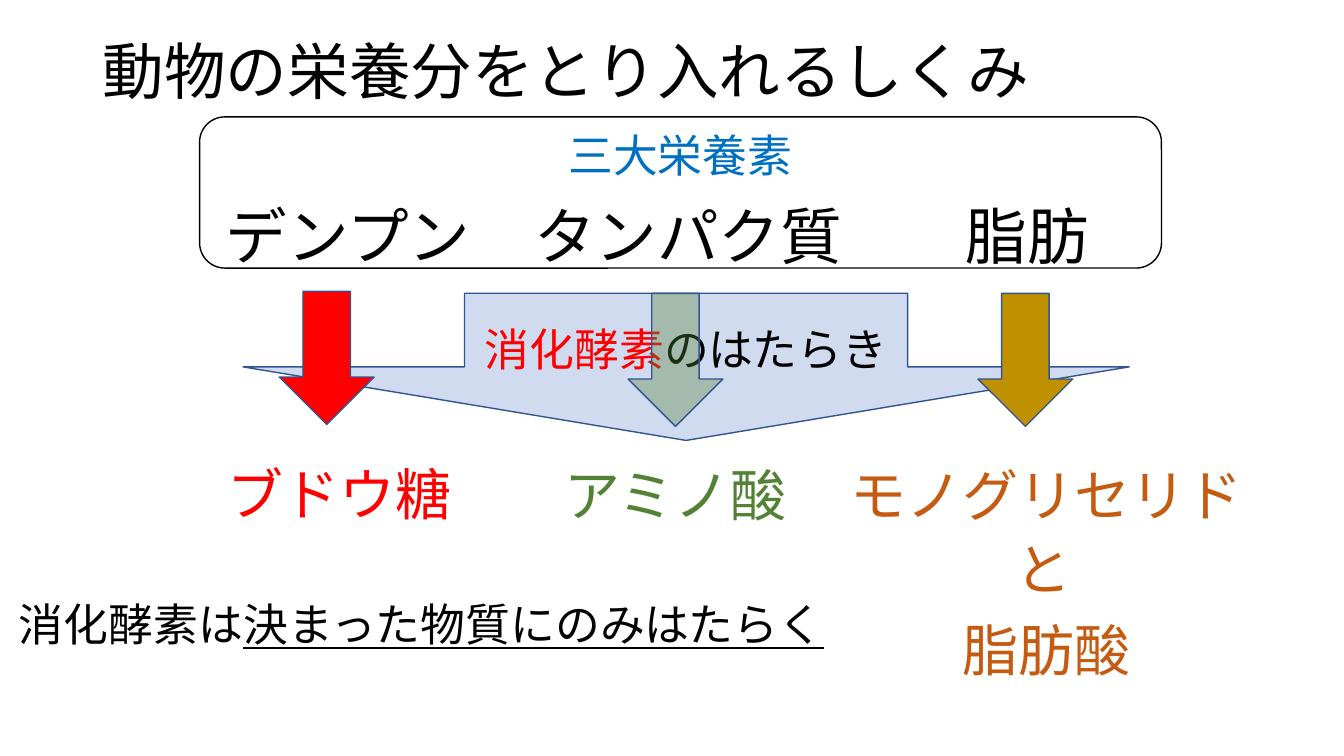
from dataclasses import dataclass

from lxml import etree
from pptx import Presentation
from pptx.dml.color import RGBColor
from pptx.enum.shapes import MSO_SHAPE
from pptx.enum.text import MSO_ANCHOR, PP_ALIGN
from pptx.oxml.ns import qn
from pptx.util import Inches, Pt

ROUNDED, DOWN_ARROW = MSO_SHAPE.ROUNDED_RECTANGLE, MSO_SHAPE.DOWN_ARROW
TOP, MIDDLE = MSO_ANCHOR.TOP, MSO_ANCHOR.MIDDLE
LEFT, CENTER = PP_ALIGN.LEFT, PP_ALIGN.CENTER


@dataclass(frozen=True)
class Theme:
    font: str = "Noto Sans CJK JP"
    title: int = 44
    product: int = 40
    note: int = 32
    black: str = "000000"
    white: str = "FFFFFF"
    blue: str = "0070C0"
    pale_blue: str = "4472C4"
    outline: str = "325491"
    red: str = "FF0000"
    green: str = "548235"
    gold: str = "BF9000"
    orange: str = "C55A11"


theme = Theme()


def write(shape, spans, size, align=CENTER, anchor=MIDDLE):
    """Fill a shape with one paragraph of (text, colour, underlined) spans."""
    frame = shape.text_frame
    frame.word_wrap = True
    frame.vertical_anchor = anchor
    para = frame.paragraphs[0]
    para.alignment = align
    for text, color, underlined in spans:
        span = para.add_run()
        span.text = text
        span.font.size = Pt(size)
        span.font.name = theme.font
        span.font.color.rgb = RGBColor.from_string(color)
        if underlined:
            span.font.underline = True
        east_asian = etree.SubElement(span.font._element, qn("a:ea"))
        east_asian.set("typeface", theme.font)
    return para


def add_figure(kind, bounds, fill, line, opacity=100):
    shape = page.shapes.add_shape(kind, *map(Inches, bounds))
    shape.shadow.inherit = False
    shape.fill.solid()
    shape.fill.fore_color.rgb = RGBColor.from_string(fill)
    shape.line.color.rgb = RGBColor.from_string(line)
    shape.line.width = Pt(1)
    if opacity < 100:
        color = shape.fill._xPr.find(qn("a:solidFill"))[0]
        etree.SubElement(color, qn("a:alpha")).set("val", str(opacity * 1000))
    return shape


deck = Presentation()
deck.slide_width, deck.slide_height = Inches(13.33), Inches(7.5)
page = deck.slides.add_slide(deck.slide_layouts[6])

# Nutrients
nutrient_frame = add_figure(ROUNDED, (1.98, 1.16, 9.54, 1.5), theme.white, theme.black)
nutrient_frame.text_frame.margin_top = Inches(0.03)
write(nutrient_frame, [("三大栄養素", theme.blue, False)], theme.note, anchor=TOP)

nutrients = page.shapes.add_textbox(Inches(0.92), Inches(2), Inches(11.5), Inches(0.9))
para = write(nutrients, [("\tデンプン\tタンパク質\t脂肪", theme.black, False)],
             theme.title, LEFT, TOP)
para.line_spacing = 0.9
tabs = etree.SubElement(para._p.get_or_add_pPr(), qn("a:tabLst"))
for position in (1.22, 4.28, 8.56):
    etree.SubElement(tabs, qn("a:tab"), pos=str(Inches(position)), algn="l")

# Products of digestion
products = [
    ("ブドウ糖", (2.08, 4.39, 2.58, 1), theme.red),
    ("アミノ酸", (5.41, 4.4, 2.58, 1), theme.green),
    ("モノグリセリド", (8.27, 4.4, 4.22, 1), theme.orange),
    ("脂肪酸", (9.09, 5.94, 2.58, 1), theme.orange),
    ("と", (9.85, 5.14, 1, 1), theme.orange),
]
for name, bounds, color in products:
    box = page.shapes.add_textbox(*map(Inches, bounds))
    write(box, [(name, color, False)], theme.product)

# Enzyme action
enzyme_arrow = add_figure(DOWN_ARROW, (2.41, 2.91, 8.79, 1.46),
                          theme.pale_blue, theme.outline, 25)
write(enzyme_arrow, [("消化酵素", theme.red, False),
                     ("のはたらき", theme.black, False)], theme.note)

for left, top, color, opacity in [(2.77, 2.89, theme.red, 100),
                                  (6.23, 2.91, theme.green, 36),
                                  (9.7, 2.91, theme.gold, 100)]:
    add_figure(DOWN_ARROW, (left, top, 0.94, 1.32), color, theme.outline, opacity)

# Note and title
note = page.shapes.add_textbox(Inches(0), Inches(5.39), Inches(8.36), Inches(1.59))
write(note, [("消化酵素は", theme.black, False),
             ("決まった物質にのみはたらく", theme.black, True)], theme.note)

title = page.shapes.add_textbox(Inches(0.92), Inches(-0.01), Inches(11.5), Inches(1.5))
para = write(title, [("動物の栄養分をとり入れるしくみ", theme.black, False)],
             theme.title, LEFT)
para.line_spacing = 0.9

deck.save("out.pptx")
